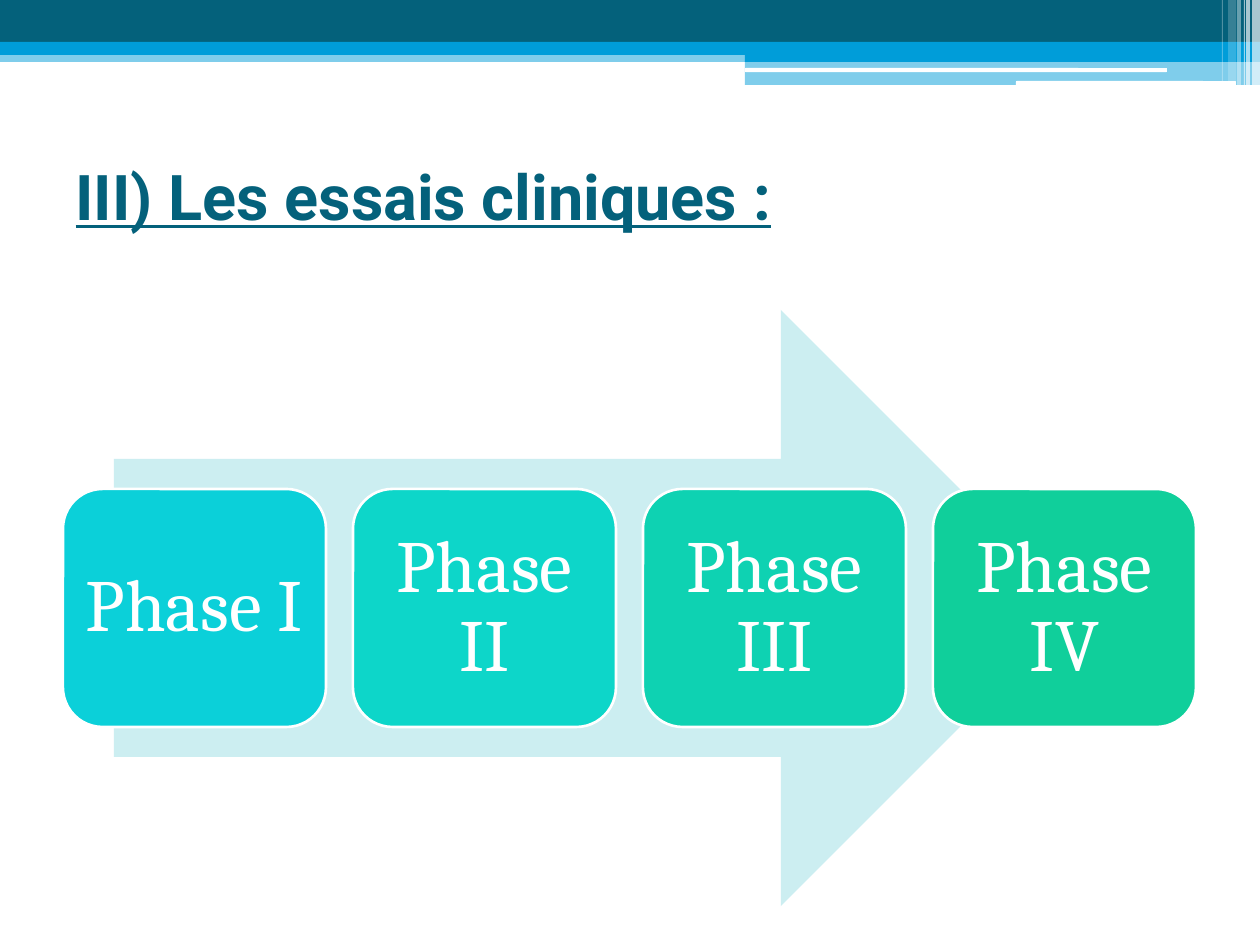
"""Build the slide on the phases of clinical trials."""
from dataclasses import dataclass

from lxml.etree import SubElement
from pptx import Presentation
from pptx.dml.color import RGBColor as RGB
from pptx.enum.shapes import MSO_SHAPE as SHAPE
from pptx.enum.text import MSO_ANCHOR as ANCHOR, PP_ALIGN as ALIGN
from pptx.oxml.ns import qn
from pptx.util import Pt


@dataclass(frozen=True)
class Theme:
    dark: str = "04617B"
    blue: str = "009DD9"
    white: str = "FFFFFF"
    arrow: str = "CCEEF1"
    phases: tuple = ("0BD0D9", "0DD6C9", "0ED2B2", "10CF9B")
    title_font: str = "Roboto"
    phase_font: str = "Cambria"
    title_size: int = 36
    phase_size: int = 42


theme = Theme()
PX = 914400 / 126


def px(value):
    return round(value * PX)


def add_block(preset, left, top, width, height, color, opacity=100):
    block = slide.shapes.add_shape(preset, px(left), px(top), px(width), px(height))
    block.shadow.inherit = False
    block.line.fill.background()
    block.fill.solid()
    block.fill.fore_color.rgb = RGB.from_string(color)
    if opacity < 100:
        color_element = block.fill._xPr.find(qn("a:solidFill"))[0]
        SubElement(color_element, qn("a:alpha"), val=str(opacity * 1000))
    return block


prs = Presentation()
prs.slide_width, prs.slide_height = px(1260), px(945)
slide = prs.slides.add_slide(prs.slide_layouts[5])

header_bands = [
    (0, 50, 1260, 12, theme.blue, 50),
    (0, 0, 1260, 42, theme.dark, 100),
    (0, 42, 1260, 13, theme.blue, 100),
    (745, 49, 515, 13, theme.blue, 100),
    (745, 61, 515, 24, theme.blue, 50),
]
for *bounds, color, opacity in header_bands:
    add_block(SHAPE.RECTANGLE, *bounds, color, opacity)

for bounds in [(745, 68, 422, 4), (1016, 81, 220, 5)]:
    add_block(SHAPE.ROUNDED_RECTANGLE, *bounds, theme.white)

corner_stripes = [
    (1252, 8, 85, 65),
    (1246, 4, 85, 65),
    (1244, 1, 85, 60),
    (1237, 4, 85, 40),
    (1228, 8, 81, 20),
    (1222, 1, 81, 30),
]
for left, width, height, opacity in corner_stripes:
    add_block(SHAPE.RECTANGLE, left, 0, width, height, theme.white, opacity)

title = slide.shapes.title
title.left, title.top, title.width, title.height = px(63), px(157), px(1134), px(147)
heading = title.text_frame
heading.text = "III) Les essais cliniques :"
heading.vertical_anchor = ANCHOR.TOP
heading.margin_top = 0
heading.paragraphs[0].alignment = ALIGN.LEFT
heading_font = heading.paragraphs[0].runs[0].font
heading_font.name = theme.title_font
heading_font.size = Pt(theme.title_size)
heading_font.bold = heading_font.underline = True
heading_font.color.rgb = RGB.from_string(theme.dark)

add_block(SHAPE.RIGHT_ARROW, 114, 310, 965, 596, theme.arrow)

for index, (numeral, color) in enumerate(zip(("I", "II", "III", "IV"), theme.phases)):
    phase = add_block(SHAPE.ROUNDED_RECTANGLE, 63 + 290 * index, 489, 263, 238, color)
    phase.line.color.rgb = RGB.from_string(theme.white)
    phase.line.width = Pt(1.5)
    label = phase.text_frame
    label.text = f"Phase {numeral}"
    label.word_wrap = True
    label.vertical_anchor = ANCHOR.MIDDLE
    label.margin_left = label.margin_right = px(9)
    label.margin_top = label.margin_bottom = px(9)
    paragraph = label.paragraphs[0]
    paragraph.alignment = ALIGN.CENTER
    paragraph.line_spacing = 0.9
    label_font = paragraph.runs[0].font
    label_font.name = theme.phase_font
    label_font.size = Pt(theme.phase_size)
    label_font.color.rgb = RGB.from_string(theme.white)

prs.save("out.pptx")
